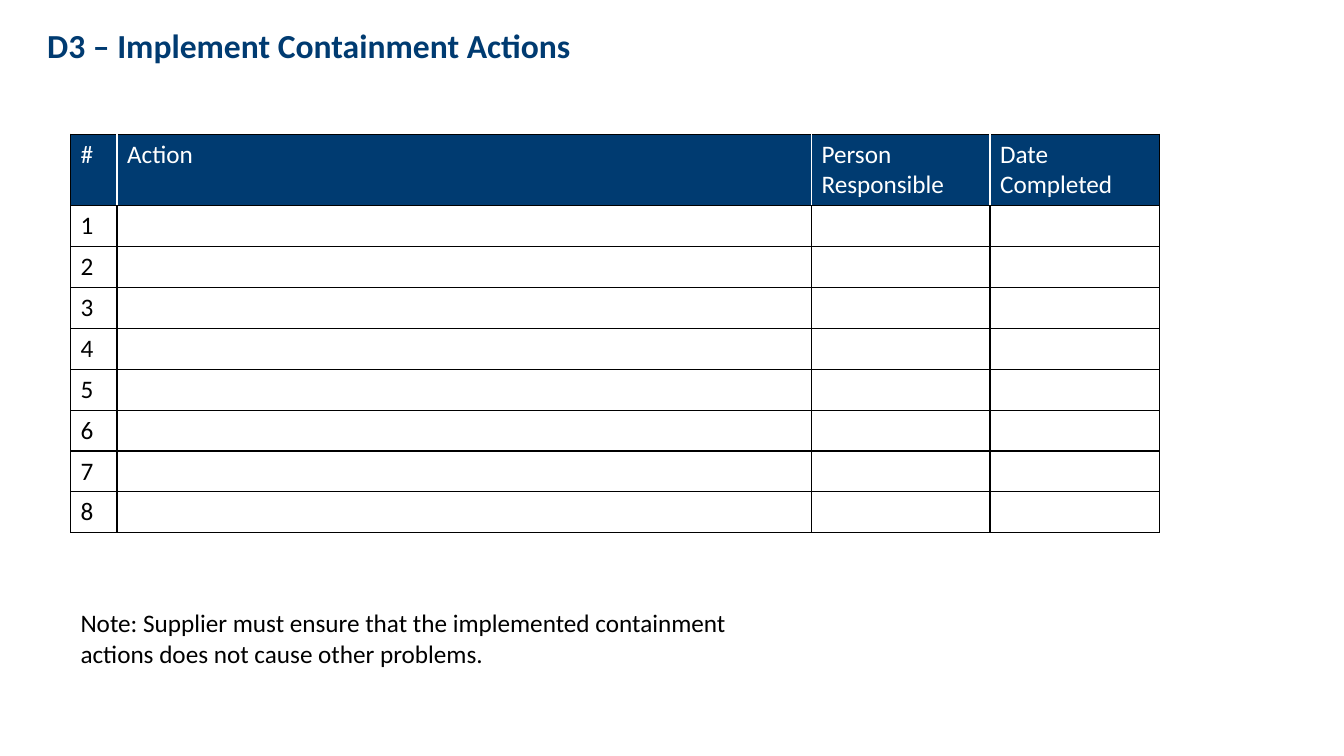
from lxml.etree import SubElement
from pptx import Presentation
from pptx.dml.color import RGBColor
from pptx.oxml.ns import qn
from pptx.util import Cm, Pt

NAVY = RGBColor(0x00, 0x3B, 0x71)
BLACK = RGBColor(0, 0, 0)
WHITE = RGBColor(255, 255, 255)

HEADS = ["#", "Action", "Person Responsible", "Date Completed"]
WIDTHS = [1.17, 17.5, 4.5, 4.27]
COUNT = 8
HEAD_H = 1.8
ROW_H = 1.03


def write(frame, text, size=18, color=BLACK, bold=False):
    frame.word_wrap = True
    para = frame.paragraphs[0]
    para.text = text
    for font in [para.font] + [run.font for run in para.runs]:
        font.name = "Calibri"
        font.size = Pt(size)
        font.bold = bold
        font.color.rgb = color


def add_text(slide, left, top, width, height, text, **style):
    box = slide.shapes.add_textbox(Cm(left), Cm(top), Cm(width), Cm(height))
    write(box.text_frame, text, **style)


def add_edges(cell, colors):
    props = cell._tc.get_or_add_tcPr()
    for spot, (side, color) in enumerate(zip("LRTB", colors)):
        line = SubElement(props, qn(f"a:ln{side}"), w=str(Pt(1)))
        fill = SubElement(line, qn("a:solidFill"))
        SubElement(fill, qn("a:srgbClr"), val=str(color))
        props.remove(line)
        props.insert(spot, line)


def set_cell(cell, text, fill, color, edges):
    cell.fill.solid()
    cell.fill.fore_color.rgb = fill
    write(cell.text_frame, text, color=color)
    add_edges(cell, edges)


def add_grid(slide, left, top):
    height = HEAD_H + COUNT * ROW_H
    shape = slide.shapes.add_table(COUNT + 1, len(HEADS), Cm(left), Cm(top),
                                   Cm(sum(WIDTHS)), Cm(height))
    table = shape.table
    table.horz_banding = False
    for col, width in zip(table.columns, WIDTHS):
        col.width = Cm(width)
    for row in table.rows:
        row.height = Cm(ROW_H)
    table.rows[0].height = Cm(HEAD_H)

    last = len(HEADS) - 1
    for col, head in enumerate(HEADS):
        edges = [BLACK if col == 0 else WHITE,
                 BLACK if col == last else WHITE, BLACK, BLACK]
        set_cell(table.cell(0, col), head, NAVY, WHITE, edges)
        for row in range(1, COUNT + 1):
            text = str(row) if col == 0 else ""
            set_cell(table.cell(row, col), text, WHITE, BLACK, [BLACK] * 4)


def main():
    deck = Presentation()
    deck.slide_width = Cm(33.87)
    deck.slide_height = Cm(19.05)
    slide = deck.slides.add_slide(deck.slide_layouts[6])
    add_grid(slide, 1.78, 3.38)
    add_text(slide, 1.78, 15.19, 16.94, 1.8,
             "Note: Supplier must ensure that the implemented containment "
             "actions does not cause other problems.")
    add_text(slide, 0.94, 0.51, 28.55, 1.98,
             "D3 – Implement Containment Actions",
             size=24, color=NAVY, bold=True)
    deck.save("out.pptx")


if __name__ == "__main__":
    main()
